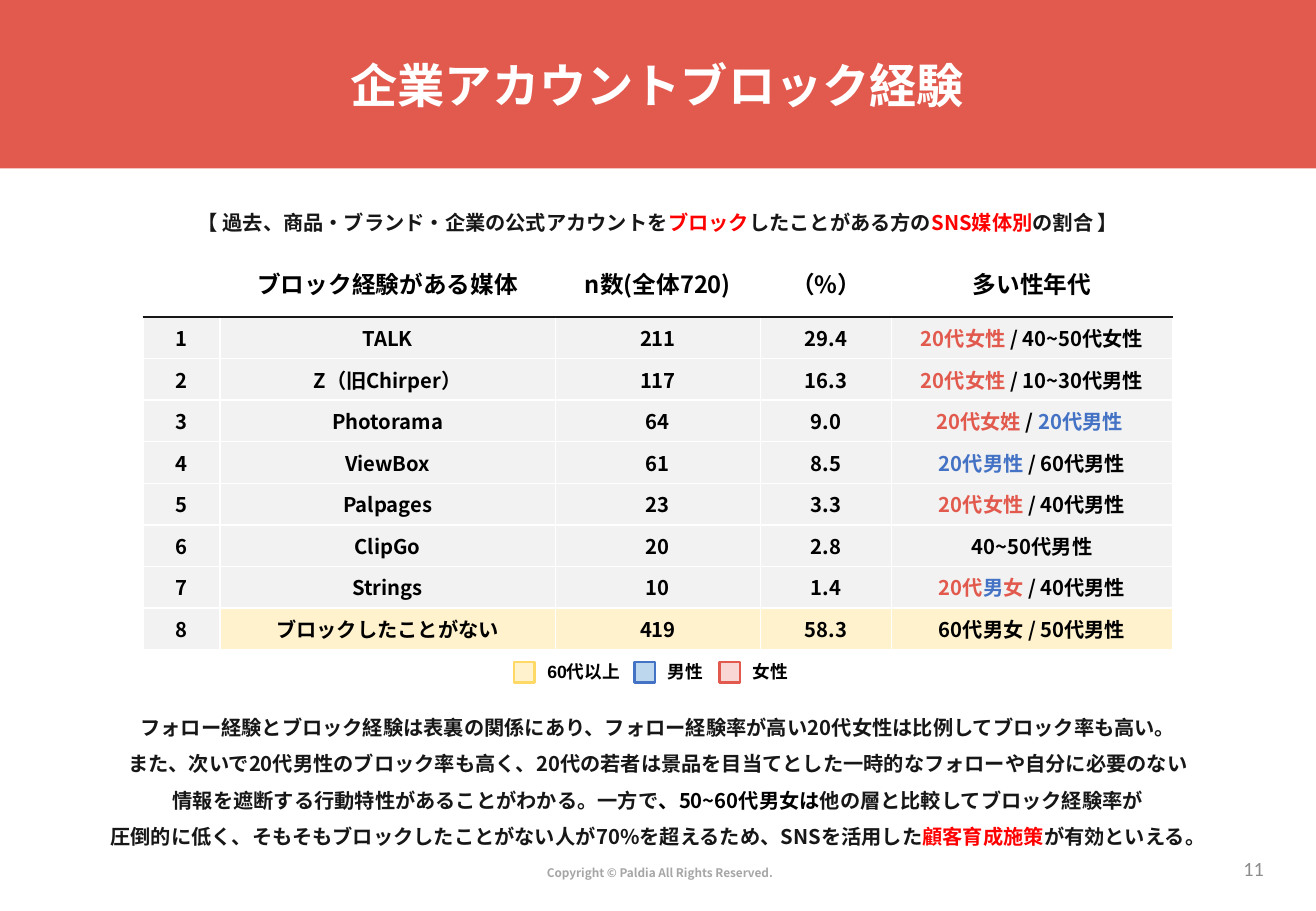
from dataclasses import dataclass
from typing import Any

from lxml import etree
from pptx import Presentation
from pptx import util as u
from pptx.dml.color import RGBColor
from pptx.enum import shapes, text
from pptx.oxml.ns import qn

WIDE, HIGH = u.Inches(10.83), u.Inches(7.5)
RED = RGBColor(0xE2, 0x5A, 0x4E)
BLUE = RGBColor(0x44, 0x72, 0xC4)
BLACK = RGBColor(0, 0, 0)
WHITE = RGBColor(0xFF, 0xFF, 0xFF)
INK = RGBColor(0x18, 0x17, 0x17)
ALERT = RGBColor(0xFF, 0, 0)
PALE = RGBColor(0xF2, 0xF2, 0xF2)
CREAM = RGBColor(0xFF, 0xF2, 0xCC)
GOLD = RGBColor(0xFF, 0xD9, 0x66)
SKY = RGBColor(0xBD, 0xD7, 0xEE)
ROSE = RGBColor(0xF8, 0xD7, 0xD4)
GREY = RGBColor(0xA6, 0xA6, 0xA6)
SLATE = RGBColor(0x8C, 0x8C, 0x8C)
NOTO = "Noto Sans CJK JP"
MID, LEFT, RIGHT = text.PP_ALIGN.CENTER, text.PP_ALIGN.LEFT, text.PP_ALIGN.RIGHT
CORE, TOP = text.MSO_ANCHOR.MIDDLE, text.MSO_ANCHOR.TOP

Run = tuple[str, RGBColor]


@dataclass
class Area:
    """Place and size in percent of the slide."""
    x: float
    y: float
    w: float
    h: float

    def emu(self) -> tuple[int, int, int, int]:
        return across(self.x), down(self.y), across(self.w), down(self.h)


@dataclass
class Style:
    size: float
    face: str = NOTO
    bold: bool = True
    align: Any = MID
    space: float = 1.0
    anchor: Any = TOP
    wrap: bool = True


@dataclass
class Label:
    area: Area
    style: Style
    lines: list[list[Run]]


@dataclass
class Key:
    """One legend entry: a swatch and its word."""
    x: float
    w: float
    word: str
    fill: RGBColor
    edge: RGBColor
    face: str = "Calibri"


def across(share: float) -> int:
    return round(WIDE * share / 100)


def down(share: float) -> int:
    return round(HIGH * share / 100)


def apply(item: Any, form: dict[str, Any]) -> None:
    for name, value in form.items():
        setattr(item, name, value)


def write(frame: Any, lines: list[list[Run]], style: Style) -> None:
    for i, runs in enumerate(lines):
        para = frame.add_paragraph() if i else frame.paragraphs[0]
        apply(para, {"alignment": style.align, "line_spacing": style.space})
        for words, tint in runs:
            run = para.add_run()
            run.text = words
            apply(run.font, {"size": u.Pt(style.size), "bold": style.bold,
                             "name": style.face})
            run.font.color.rgb = tint
            east = etree.SubElement(run.font._element, qn("a:ea"))
            east.set("typeface", NOTO)


def draw_label(slide: Any, label: Label) -> None:
    frame = slide.shapes.add_textbox(*label.area.emu()).text_frame
    apply(frame, {"word_wrap": label.style.wrap,
                  "vertical_anchor": label.style.anchor})
    write(frame, label.lines, label.style)


def draw_rect(slide: Any, area: Area, fill: RGBColor,
              edge: RGBColor | None = None) -> None:
    rect = slide.shapes.add_shape(shapes.MSO_SHAPE.RECTANGLE, *area.emu())
    rect.shadow.inherit = False
    rect.fill.solid()
    rect.fill.fore_color.rgb = fill
    if edge is None:
        rect.line.fill.background()
    else:
        rect.line.color.rgb = edge
        rect.line.width = u.Pt(1.5)


def draw_key(slide: Any, key: Key) -> None:
    draw_rect(slide, Area(key.x, 72.67, 1.57, 2.27), key.fill, key.edge)
    style = Style(10.5, key.face, align=LEFT, wrap=False)
    draw_label(slide, Label(Area(key.x + 1.62, 71.87, key.w, 3.73), style,
                            [[(key.word, BLACK)]]))


def set_edges(cell: Any, edges: dict[str, RGBColor]) -> None:
    props = cell._tc.get_or_add_tcPr()
    for side, tint in edges.items():
        line = etree.SubElement(props, qn(f"a:ln{side}"), w=str(u.Pt(1)))
        paint = etree.SubElement(line, qn("a:solidFill"))
        etree.SubElement(paint, qn("a:srgbClr"), val=str(tint))


def draw_table(slide: Any, rows: list[list[list[Run]]]) -> None:
    widths = [5.82, 25.48, 15.6, 9.97, 21.33]
    heights = [7.33] + [4.5] * (len(rows) - 1)
    area = Area(10.9, 27.47, sum(widths), sum(heights))
    table = slide.shapes.add_table(len(rows), len(widths), *area.emu()).table
    apply(table, {"first_row": False, "horz_banding": False})
    for col, share in zip(table.columns, widths):
        col.width = across(share)
    for r, (row, share) in enumerate(zip(rows, heights)):
        table.rows[r].height = down(share)
        for c, runs in enumerate(row):
            cell = table.cell(r, c)
            set_edges(cell, {"L": WHITE, "R": WHITE,
                             "T": INK if r == 1 else WHITE,
                             "B": INK if r == 0 else WHITE})
            cell.fill.solid()
            last = r == len(rows) - 1 and c > 0
            cell.fill.fore_color.rgb = WHITE if r == 0 else CREAM if last else PALE
            cell.vertical_anchor = CORE
            write(cell.text_frame, [runs], Style(12 if r else 14))


HEADS = ["", "ブロック経験がある媒体", "n数(全体720)", "（%）", "多い性年代"]
MEDIA: list[tuple[str, str, str, list[Run]]] = [
    ("TALK", "211", "29.4", [("20代女性 ", RED), ("/ 40~50代女性", BLACK)]),
    ("Z（旧Chirper）", "117", "16.3", [("20代女性 ", RED), ("/ 10~30代男性", BLACK)]),
    ("Photorama", "64", "9.0", [("20代女姓 ", RED), ("/ ", BLACK), ("20代男性 ", BLUE)]),
    ("ViewBox", "61", "8.5", [("20代男性 ", BLUE), ("/ 60代男性", BLACK)]),
    ("Palpages", "23", "3.3", [("20代女性 ", RED), ("/ 40代男性", BLACK)]),
    ("ClipGo", "20", "2.8", [("40~50代男性", BLACK)]),
    ("Strings", "10", "1.4", [("20代", RED), ("男", BLUE), ("女 ", RED),
                              ("/ 40代男性", BLACK)]),
    ("ブロックしたことがない", "419", "58.3", [("60代男女 / 50代男性", BLACK)]),
]
KEYS = [
    Key(39.06, 7.76, "60代以上", CREAM, GOLD, "Arial"),
    Key(48.2, 4.62, "男性", SKY, BLUE),
    Key(54.66, 4.62, "女性", ROSE, RED),
]
PROSE = Style(12, space=1.5)
LABELS = [
    Label(Area(25.12, 94.4, 50.05, 2.93), Style(7),
          [[("Copyright © Paldia All Rights Reserved.", GREY)]]),
    Label(Area(6.83, 4.13, 86.24, 11.2), Style(28, space=0.9, anchor=CORE),
          [[("企業アカウントブロック経験", WHITE)]]),
    Label(Area(10.06, 21.07, 79.87, 5.07), PROSE, [[
        ("【 過去、商品・ブランド・企業の公式アカウントを", INK), ("ブロック", ALERT),
        ("したことがある方の", INK), ("SNS媒体別", ALERT), ("の割合 】", INK)]]),
    Label(Area(4.16, 76.53, 91.69, 17.07), PROSE, [
        [("フォロー経験とブロック経験は表裏の関係にあり、フォロー経験率が高い"
          "20代女性は比例してブロック率も高い。", INK)],
        [("また、次いで20代男性のブロック率も高く、20代の若者は景品を目当てとした"
          "一時的なフォローや自分に必要のない", INK)],
        [("情報を遮断する行動特性があることがわかる。一方で", INK),
         ("、50~60代男女は", BLACK), ("他の層と比較してブロック経験率が", INK)],
        [("圧倒的に低く、そもそもブロックしたことがない人が70%を超えるため、"
          "SNSを活用した", INK), ("顧客育成施策", ALERT), ("が有効といえる。", INK)]]),
    Label(Area(74.42, 92.67, 22.53, 5.33),
          Style(12, "Calibri", False, RIGHT, anchor=CORE), [[("11", SLATE)]]),
]


def main() -> None:
    deck = Presentation()
    apply(deck, {"slide_width": WIDE, "slide_height": HIGH})
    slide = deck.slides.add_slide(deck.slide_layouts[6])
    draw_rect(slide, Area(0, 0, 100, 18.5), RED)
    rows = [[[(head, BLACK)] if head else [] for head in HEADS]]
    for rank, (name, count, rate, ages) in enumerate(MEDIA, 1):
        plain = [[(word, BLACK)] for word in (str(rank), name, count, rate)]
        rows.append(plain + [ages])
    draw_table(slide, rows)
    for label in LABELS:
        draw_label(slide, label)
    for key in KEYS:
        draw_key(slide, key)
    deck.save("out.pptx")


if __name__ == "__main__":
    main()
